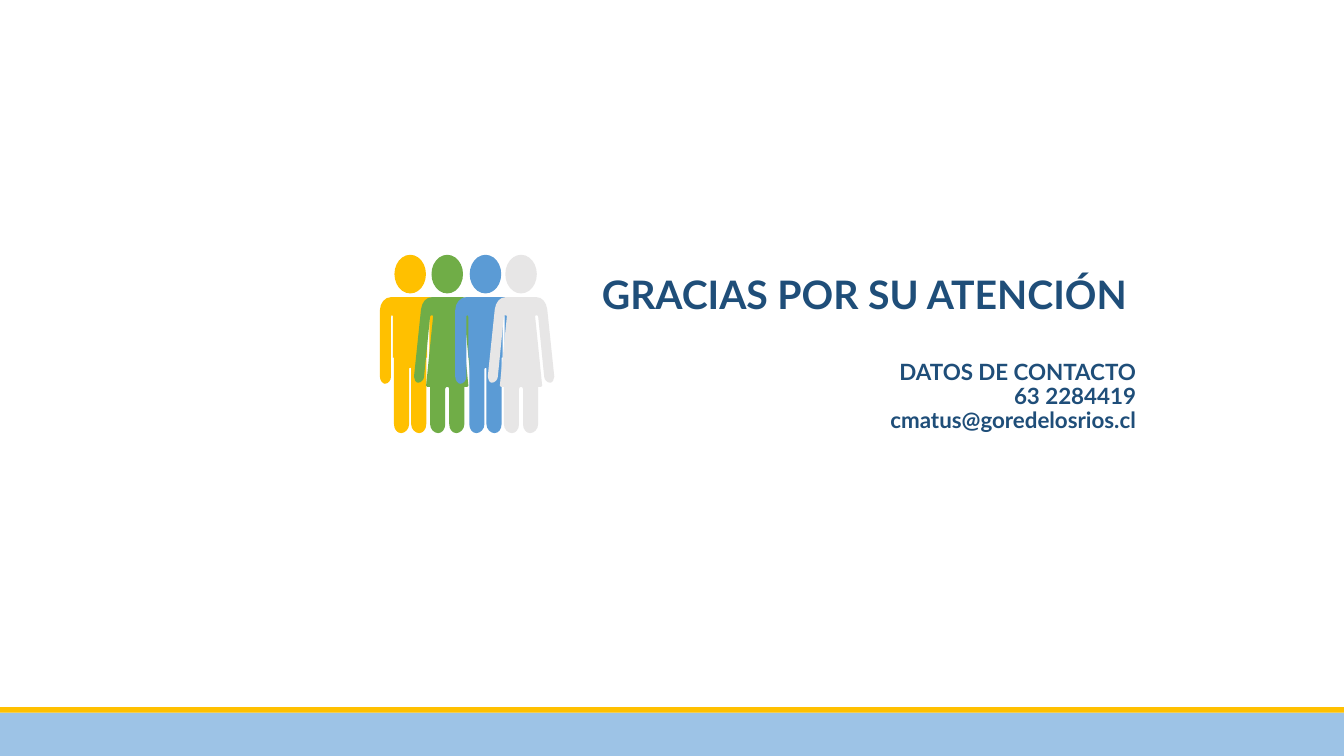
"""Build the closing thank-you slide with its row of four people."""
from pptx import Presentation
from pptx.dml.color import RGBColor
from pptx.enum.shapes import MSO_SHAPE
from pptx.enum.text import MSO_ANCHOR, PP_ALIGN
from pptx.oxml.ns import qn
from pptx.util import Pt

RECTANGLE, OVAL = MSO_SHAPE.RECTANGLE, MSO_SHAPE.OVAL
MIDDLE, RIGHT = MSO_ANCHOR.MIDDLE, PP_ALIGN.RIGHT

NAVY = RGBColor(0x1F, 0x4E, 0x79)
PALE_BLUE = RGBColor(0x9D, 0xC3, 0xE6)
GOLD = RGBColor(0xFF, 0xC0, 0x00)
GREEN = RGBColor(0x70, 0xAD, 0x47)
BLUE = RGBColor(0x5B, 0x9B, 0xD5)
GREY = RGBColor(0xE7, 0xE6, 0xE6)

FONT = "Lato"
THANKS = ["GRACIAS POR SU ATENCIÓN "]
CONTACT = ["DATOS DE CONTACTO", "63 2284419", "cmatus@goredelosrios.cl"]

BANDS = [(509, 31, PALE_BLUE), (505.2, 3.8, GOLD)]

# Left half of each body: pairs are line ends, sextuples are Bézier curves.
MAN = [
    (11, 0), (5, 0, 0, 6, 0, 13), (0, 79), (0, 83, 3, 86, 5, 86),
    (8, 86, 11, 83, 11, 79), (11, 20), (11, 19, 11, 18, 12, 18),
    (13, 18, 13, 19, 13, 20), (13, 60), (14, 60), (14, 126),
    (14, 131, 17, 135, 21, 135), (25, 135, 29, 131, 29, 126),
    (29, 72), (29, 71, 29, 70, 30, 70),
]
WOMAN = [
    (18, 0), (12, 0, 8, 5, 7, 12), (0, 79), (0, 82, 2, 85, 4, 85),
    (7, 85, 10, 82, 10, 79), (16, 19), (16, 18, 17, 18, 17, 18),
    (18, 18, 19, 18, 19, 19), (12, 88), (12, 89, 12, 89, 13, 89),
    (16, 89), (16, 126), (16, 131, 20, 135, 24, 135),
    (28, 135, 31, 131, 31, 126), (31, 91), (31, 90, 32, 89, 33, 89),
]
PEOPLE = [(293, MAN, GOLD), (319.5, WOMAN, GREEN),
          (346.8, MAN, BLUE), (372.2, WOMAN, GREY)]
BODY_UNIT = 0.72
HEAD_TOP, BODY_TOP = 182, 212.2
HEAD_WIDTH, HEAD_HEIGHT = 22.5, 27.6


def paint(shape, color):
    shape.shadow.inherit = False
    shape.fill.solid()
    shape.fill.fore_color.rgb = color
    shape.line.fill.background()


def add_shape(page, kind, left, top, width, height, color):
    paint(page.shapes.add_shape(kind, Pt(left), Pt(top), Pt(width), Pt(height)), color)


def bend(shape, sizes):
    """Join each group of three line segments into one Bézier curve."""
    lines = iter(list(shape.element.iter(qn("a:lnTo"))))
    for size in sizes:
        first, *others = [next(lines) for _ in range(size)]
        if others:
            first.tag = qn("a:cubicBezTo")
        for line in others:
            first.append(line[0])
            line.getparent().remove(line)


def add_person(page, center, outline, color):
    add_shape(page, OVAL, center - HEAD_WIDTH / 2, HEAD_TOP, HEAD_WIDTH, HEAD_HEIGHT, color)
    half = [pair for part in outline for pair in zip(part[::2], part[1::2])]
    sizes = [len(part) // 2 for part in outline[1:]]
    middle = half[-1][0]
    whole = half + [(2 * middle - x, y) for x, y in reversed(half[:-1])]
    points = [(Pt(center + (x - middle) * BODY_UNIT), Pt(BODY_TOP + y * BODY_UNIT))
              for x, y in whole]
    builder = page.shapes.build_freeform(*points[0])
    builder.add_line_segments(points[1:], close=True)
    body = builder.convert_to_shape()
    bend(body, sizes + sizes[::-1])
    paint(body, color)


def write(para, lines, size, space_before=0):
    para.alignment = RIGHT
    para.line_spacing = 0.9
    para.space_before = Pt(space_before)
    for index, line in enumerate(lines):
        if index:
            para.add_line_break()
        span = para.add_run()
        span.text = line
        span.font.name = FONT
        span.font.size = Pt(size)
        span.font.bold = True
        span.font.color.rgb = NAVY


def main():
    deck = Presentation()
    deck.slide_width, deck.slide_height = Pt(960), Pt(540)
    page = deck.slides.add_slide(deck.slide_layouts[6])

    box = page.shapes.add_textbox(Pt(141), Pt(118), Pt(677.6), Pt(270.7))
    frame = box.text_frame
    frame.word_wrap = True
    frame.vertical_anchor = MIDDLE
    write(frame.paragraphs[0], THANKS, 28)
    write(frame.add_paragraph(), CONTACT, 16, space_before=30.3)

    for top, height, color in BANDS:
        add_shape(page, RECTANGLE, 0, top, 960, height, color)
    for center, outline, color in PEOPLE:
        add_person(page, center, outline, color)

    deck.save("out.pptx")


if __name__ == "__main__":
    main()
